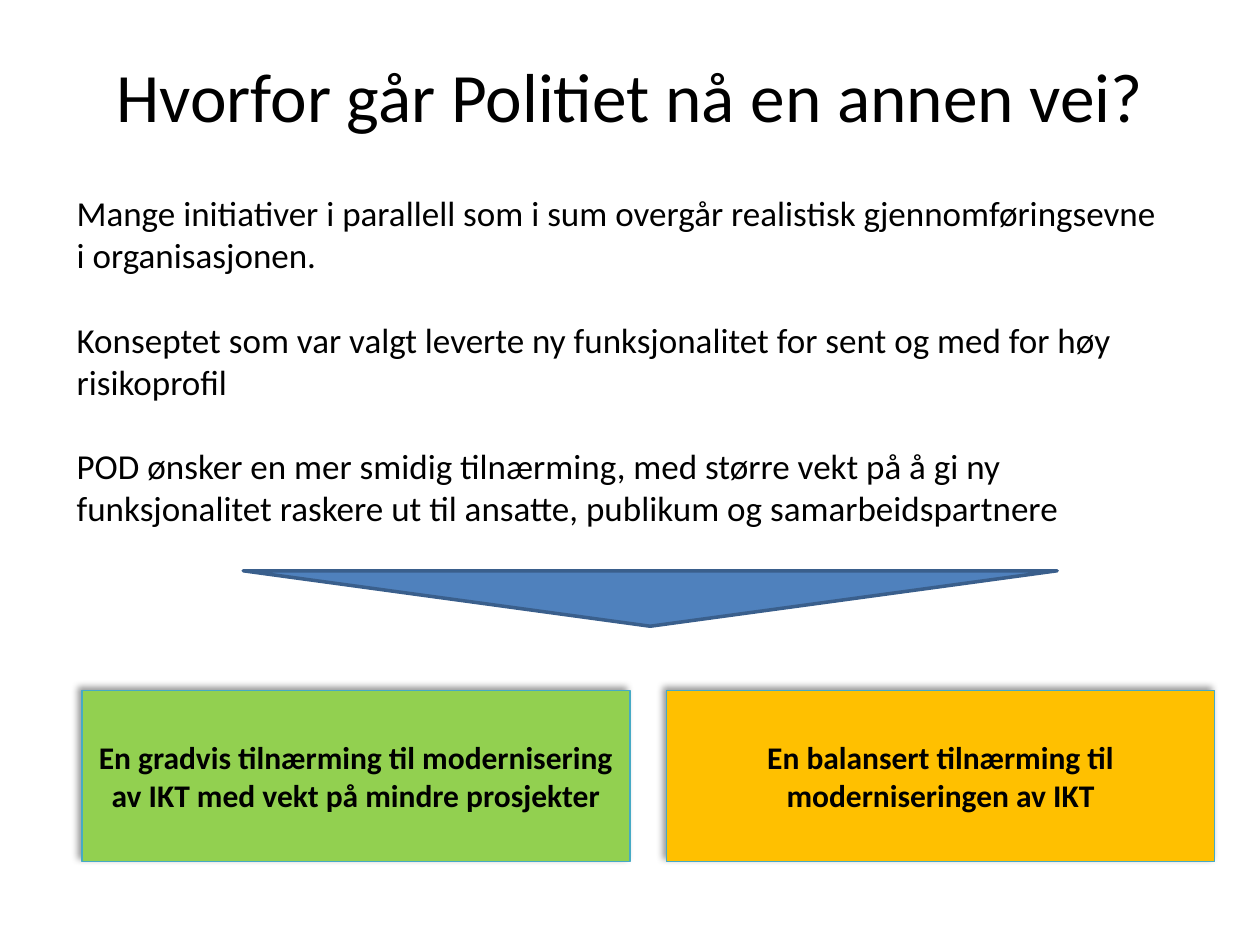
from lxml.etree import SubElement
from pptx import Presentation
from pptx.dml.color import RGBColor
from pptx.enum.shapes import MSO_SHAPE as Shape
from pptx.enum.text import MSO_ANCHOR as Anchor, PP_ALIGN as Align
from pptx.oxml.ns import qn
from pptx.util import Inches, Pt

BLACK = RGBColor(0x00, 0x00, 0x00)
GREEN = RGBColor(0x92, 0xD0, 0x50)
AMBER = RGBColor(0xFF, 0xC0, 0x00)
TEAL = RGBColor(0x46, 0xAA, 0xC5)
BLUE = RGBColor(0x4F, 0x81, 0xBD)
DARK_BLUE = RGBColor(0x3A, 0x5F, 0x8C)

TITLE = "Hvorfor går Politiet nå en annen vei?"
REASONS = [
    "Mange initiativer i parallell som i sum overgår realistisk "
    "gjennomføringsevne i organisasjonen.",
    "Konseptet som var valgt leverte ny funksjonalitet for sent og med "
    "for høy risikoprofil",
    "POD ønsker en mer smidig tilnærming, med større vekt på å gi ny "
    "funksjonalitet raskere ut til ansatte, publikum og samarbeidspartnere",
]
APPROACHES = [
    ("En gradvis tilnærming til modernisering av IKT med vekt på mindre prosjekter", GREEN),
    ("En balansert tilnærming til moderniseringen av IKT", AMBER),
]
BOX_LEFT, BOX_STEP = 0.65, 4.64

TITLE_FONT = {"name": "Calibri", "size": Pt(39.6)}
BODY_FONT = {"name": "Calibri", "size": Pt(20)}
BOX_FONT = {"name": "Calibri", "size": Pt(18), "bold": True}


def write_text(shape, texts, font, align=Align.LEFT, anchor=Anchor.TOP, gap=0):
    frame = shape.text_frame
    frame.word_wrap = True
    frame.vertical_anchor = anchor
    for index, text in enumerate(texts):
        paragraph = frame.add_paragraph() if index else frame.paragraphs[0]
        paragraph.alignment = align
        paragraph.space_before = Pt(gap if index else 0)
        run = paragraph.add_run()
        run.text = text
        for name, value in font.items():
            setattr(run.font, name, value)
        run.font.color.rgb = BLACK


def add_text(slide, box, texts, font, **layout):
    shape = slide.shapes.add_textbox(*map(Inches, box))
    write_text(shape, texts, font, **layout)


def add_filled_shape(slide, kind, box, fill, line, width):
    shape = slide.shapes.add_shape(kind, *map(Inches, box))
    shape.shadow.inherit = False
    shape.fill.solid()
    shape.fill.fore_color.rgb = fill
    shape.line.color.rgb = line
    shape.line.width = Pt(width)
    return shape


def add_shadow(shape):
    effects = shape._element.spPr.find(qn("a:effectLst"))
    shadow = SubElement(effects, qn("a:outerShdw"), blurRad=str(Pt(4)),
                        dist=str(Pt(3)), dir=str(225 * 60000), rotWithShape="0")
    color = SubElement(shadow, qn("a:srgbClr"), val=str(BLACK))
    SubElement(color, qn("a:alpha"), val="40000")


def add_approach(slide, left, text, fill):
    shape = add_filled_shape(slide, Shape.RECTANGLE, (left, 5.48, 4.35, 1.36),
                             fill, TEAL, 0.75)
    add_shadow(shape)
    write_text(shape, [text], BOX_FONT, align=Align.CENTER, anchor=Anchor.MIDDLE)


def main():
    presentation = Presentation()
    presentation.slide_width, presentation.slide_height = Inches(10), Inches(7.5)
    slide = presentation.slides.add_slide(presentation.slide_layouts[6])

    # Title
    add_text(slide, (0.5, 0.13, 9, 1.25), [TITLE], TITLE_FONT,
             align=Align.CENTER, anchor=Anchor.MIDDLE)

    # The two approaches
    for index, (text, fill) in enumerate(APPROACHES):
        add_approach(slide, BOX_LEFT + index * BOX_STEP, text, fill)

    # Triangle pointing down to the approaches
    pointer = add_filled_shape(slide, Shape.ISOSCELES_TRIANGLE,
                               (1.93, 4.53, 6.46, 0.44), BLUE, DARK_BLUE, 2)
    pointer.rotation = 180

    # Reasons, one line apart
    add_text(slide, (0.51, 1.47, 8.82, 3.47), REASONS, BODY_FONT, gap=24.4)

    presentation.save("out.pptx")


if __name__ == "__main__":
    main()
